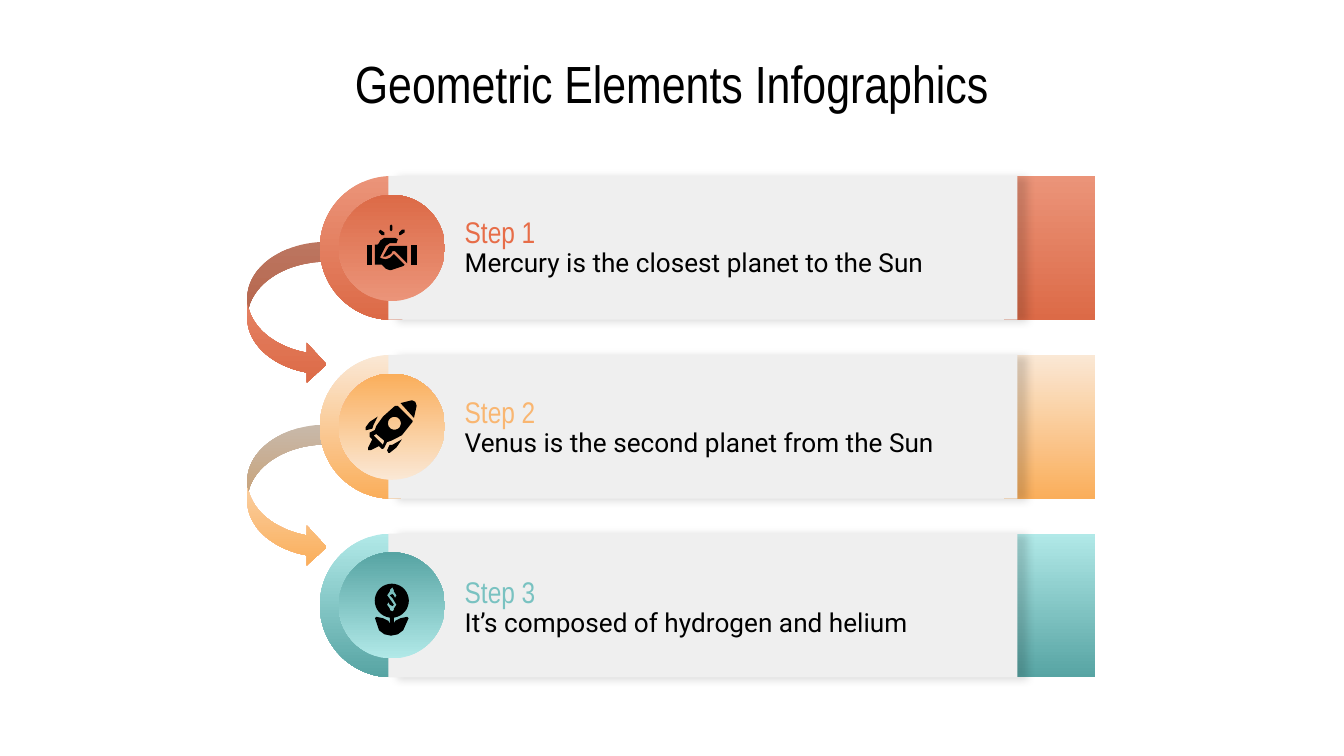
from math import cos, pi, sin

from lxml import etree
from pptx import Presentation
from pptx.dml.color import RGBColor
from pptx.enum.shapes import MSO_SHAPE as Shape
from pptx.enum.text import MSO_ANCHOR as Anchor, PP_ALIGN as Align
from pptx.oxml.ns import qn
from pptx.util import Inches, Pt

COLORS = {"ink": "000000", "panel": "EFEFEF"}
HEADING_FONT, BODY_FONT = "Arial Narrow", "Roboto"

# Each step: heading colour, gradient from light to deep, sentence
STEPS = [
    ("E76D48", ("EB9479", "DC6A47"), "Mercury is the closest planet to the Sun"),
    ("F9B671", ("FAE8D5", "FAAE5B"), "Venus is the second planet from the Sun"),
    ("79C2C1", ("B1E9E8", "57A4A3"), "It’s composed of hydrogen and helium"),
]
FIRST_TOP, ROW_PITCH, ROW_HEIGHT = 1.31, 1.33, 1.07
ARROW_TOP, ARROW_PITCH = 1.8, 1.36
BADGE_LEFT, BADGE_INSET, BADGE_SIZE = 2.52, 0.14, 0.79


def circle(x, y, radius, count=36):
    angles = [2 * pi * i / count for i in range(count)]
    return [(x + radius * cos(a), y + radius * sin(a)) for a in angles]


def rectangle(left, top, right, bottom):
    return [(left, top), (right, top), (right, bottom), (left, bottom)]


# Icons: shapes made of contours, in hundredths of an inch from the badge corner.
# Contours after the first cut holes.
HANDSHAKE = [
    [[(39, 22), (38, 23), (38, 26), (39, 27), (40, 26), (40, 23)]],
    [[(31, 26), (30, 27), (30, 28), (32, 30), (34, 30), (34, 28)]],
    [[(48, 26), (47, 26), (45, 28), (45, 30), (46, 30), (49, 28), (49, 26)]],
    [rectangle(21, 37, 25, 52)],
    [rectangle(54, 37, 58, 52)],
    [[(38, 38), (37, 39), (33, 46), (35, 46), (39, 44), (40, 42), (42, 42),
      (43, 43), (51, 51), (51, 38)]],
    [[(34, 32), (31, 34), (30, 36), (29, 37), (27, 37), (27, 52), (32, 52),
      (35, 55), (38, 56), (39, 56), (48, 53), (49, 52), (41, 44), (38, 47),
      (35, 48), (31, 47), (31, 46), (35, 38), (38, 36), (43, 36), (44, 33),
      (42, 32)]],
]
ROCKET = [
    [[(43, 24), (42, 24), (33, 32), (28, 39), (27, 42), (23, 44), (23, 47),
      (25, 49), (22, 55), (22, 57), (24, 57), (30, 54), (32, 56), (33, 56),
      (34, 55), (36, 51), (39, 50), (47, 46), (55, 36), (55, 35), (44, 24)],
     circle(41.5, 37, 4.8),
     [(28, 45), (34, 50), (33, 53), (26, 46)]],
    [[(55, 20), (54, 20), (46, 22), (56, 33), (58, 24), (57, 21)]],
    [[(47, 49), (40, 53), (38, 53), (36, 57), (37, 59), (38, 59), (43, 55)]],
    [[(29, 32), (23, 36), (20, 40), (20, 42), (21, 42), (25, 41), (26, 38)]],
]
MONEY_PLANT = [
    [circle(39.5, 36, 12.7),
     [(40, 26), (41, 28), (41, 29), (43, 32), (42, 34), (41, 32), (40, 31),
      (38, 32), (40, 34), (43, 39), (41, 42), (41, 43), (40, 44), (38, 43),
      (38, 42), (36, 39), (37, 37), (38, 39), (40, 40), (41, 39), (39, 36),
      (36, 32), (38, 29), (38, 28)]],
    [[(38, 48), (38, 53), (37, 51), (33, 49), (28, 48), (27, 49), (30, 58),
      (34, 61), (39, 62), (44, 61), (48, 58), (52, 49), (51, 48), (46, 49),
      (42, 51), (41, 53), (41, 48)]],
]
ICONS = [HANDSHAKE, ROCKET, MONEY_PLANT]


class SlideWriter:
    def __init__(self, slide):
        self.shapes = slide.shapes

    def finish(self, shape, color=None):
        shape.shadow.inherit = False
        shape.line.fill.background()
        if color:
            shape.fill.solid()
            shape.fill.fore_color.rgb = RGBColor.from_string(color)
        return shape

    def solid(self, kind, box, color):
        return self.finish(self.shapes.add_shape(kind, *map(Inches, box)), color)

    def gradient(self, kind, box, colors, angle=270):
        shape = self.finish(self.shapes.add_shape(kind, *map(Inches, box)))
        shape.fill.gradient()
        shape.fill.gradient_angle = angle
        for stop, color in zip(shape.fill.gradient_stops, colors):
            stop.color.rgb = RGBColor.from_string(color)

    def panel(self, box):
        shape = self.solid(Shape.RECTANGLE, box, COLORS["panel"])
        effects = shape._element.spPr.find(qn("a:effectLst"))
        shadow = etree.SubElement(
            effects, qn("a:outerShdw"), blurRad=str(Pt(4.5)), dist=str(Pt(4.5)),
            dir=str(6 * 60000), algn="bl", rotWithShape="0")
        tint = etree.SubElement(shadow, qn("a:srgbClr"), val=COLORS["ink"])
        etree.SubElement(tint, qn("a:alpha"), val="15000")

    def text(self, box, words, size, font, color, align=Align.LEFT, anchor=Anchor.MIDDLE):
        frame = self.shapes.add_textbox(*map(Inches, box)).text_frame
        frame.word_wrap = True
        frame.vertical_anchor = anchor
        frame.margin_left = frame.margin_right = Inches(0.1)
        frame.margin_top = frame.margin_bottom = Inches(0.1)
        frame.text = words
        para = frame.paragraphs[0]
        para.alignment = align
        span = para.runs[0]
        span.font.size = Pt(size)
        span.font.name = font
        span.font.color.rgb = RGBColor.from_string(color)

    def icon(self, left, top, parts):
        for contours in parts:
            # Thousandths of an inch keep the circles smooth
            outlines = [[(round(10 * x), round(10 * y)) for x, y in contour]
                        for contour in contours]
            builder = self.shapes.build_freeform(*outlines[0][0], scale=914.4)
            builder.add_line_segments(outlines[0][1:], close=True)
            for hole in outlines[1:]:
                builder.move_to(*hole[0])
                builder.add_line_segments(hole[1:], close=True)
            shape = builder.convert_to_shape(Inches(left), Inches(top))
            self.finish(shape, COLORS["ink"])


def main():
    # Widescreen page, 16:9
    deck = Presentation()
    deck.slide_width = Inches(10)
    deck.slide_height = Inches(10) * 9 // 16
    page = SlideWriter(deck.slides.add_slide(deck.slide_layouts[6]))

    # Title
    page.text((0.39, 0.28, 9.21, 0.63), "Geometric Elements Infographics", 28,
              HEADING_FONT, COLORS["ink"], Align.CENTER, Anchor.TOP)

    # Arrows from each step to the next
    for index, (_, colors, _) in enumerate(STEPS[:-1]):
        top = ARROW_TOP + index * ARROW_PITCH
        page.gradient(Shape.CURVED_RIGHT_ARROW, (1.84, top, 0.59, 1.06), colors)

    # Step rows
    for index, (accent, colors, sentence) in enumerate(STEPS):
        top = FIRST_TOP + index * ROW_PITCH
        page.gradient(Shape.RECTANGLE, (7.47, top, 0.68, ROW_HEIGHT), colors)
        page.gradient(Shape.OVAL, (2.38, top, ROW_HEIGHT, ROW_HEIGHT), colors)
        page.panel((2.89, top, 4.68, ROW_HEIGHT))

        badge_top = top + BADGE_INSET
        page.gradient(Shape.OVAL, (BADGE_LEFT, badge_top, BADGE_SIZE, BADGE_SIZE),
                      colors, angle=90)
        page.icon(BADGE_LEFT, badge_top, ICONS[index])

        text_top = 1.58 + index * 1.34
        page.text((3.36, text_top + 0.11, 4.17, 0.52), sentence, 14,
                  BODY_FONT, COLORS["ink"])
        page.text((3.36, text_top, 4.17, 0.29), f"Step {index + 1}", 16,
                  HEADING_FONT, accent)

    deck.save("out.pptx")


if __name__ == "__main__":
    main()
